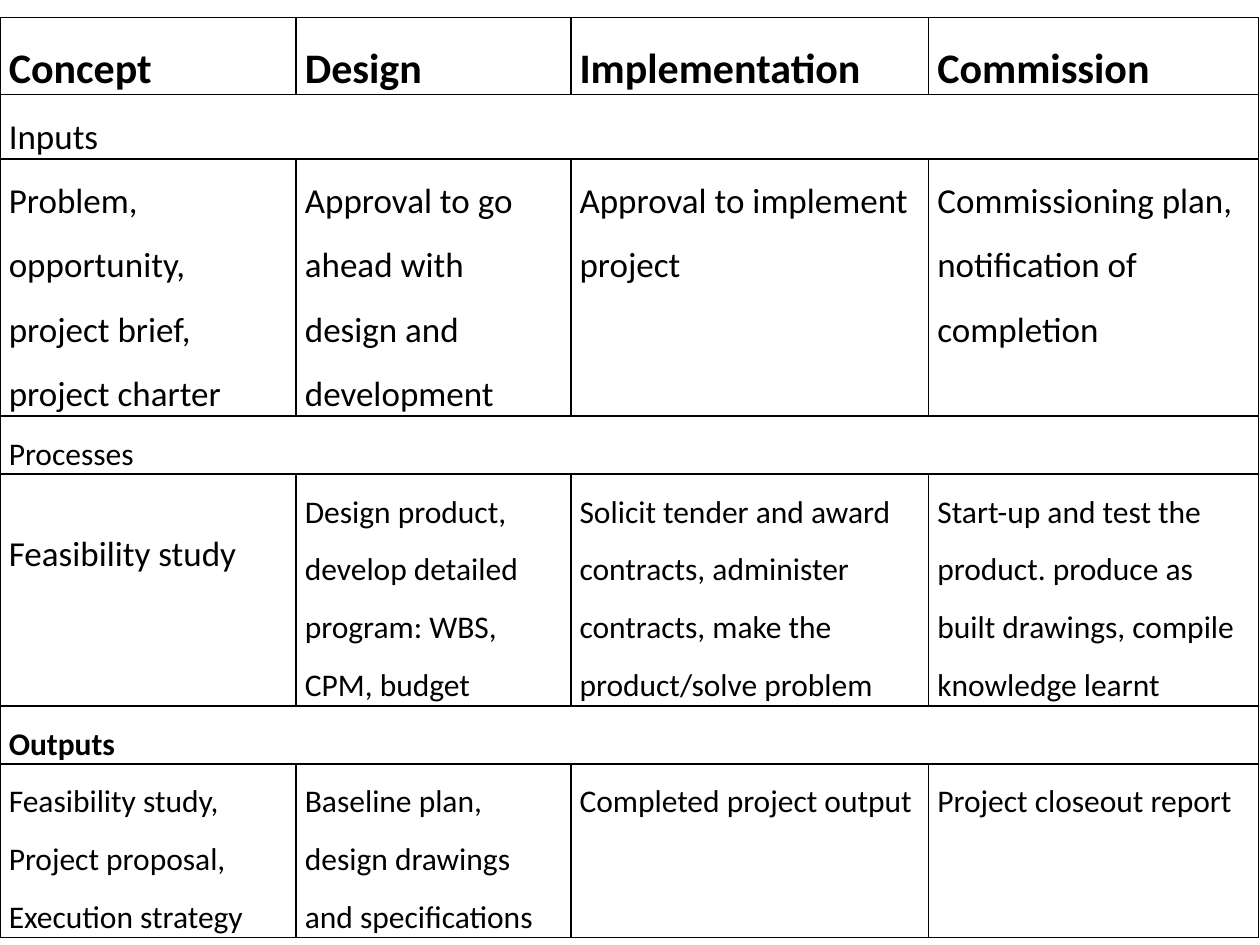
import pptx
import pptx.util
from pptx.dml.color import RGBColor
from pptx.enum.text import MSO_ANCHOR
from pptx.oxml import parse_xml
from pptx.oxml.ns import nsdecls
from pptx.util import Inches, Pt

COLORS = {"ink": "000000", "paper": "FFFFFF"}
FONT = "Calibri"
COLS = [2.35, 2.18, 2.84, 2.62]
# Row height, text size, bold, cell texts; a single text spans the row
ROWS = [
    (0.61, 24, True, ["Concept", "Design", "Implementation", "Commission"]),
    (0.51, 20, False, ["Inputs"]),
    (2.04, 20, False, [
        "Problem, opportunity, project brief, project charter",
        "Approval to go ahead with design and development",
        "Approval to implement project",
        "Commissioning plan, notification of completion"]),
    (0.46, 18, False, ["Processes"]),
    (1.84, 18, False, [
        "Feasibility study",
        "Design product, develop detailed program: WBS, CPM, budget",
        "Solicit tender and award contracts, administer contracts, "
        "make the product/solve problem",
        "Start-up and test the product. produce as built drawings, "
        "compile knowledge learnt"]),
    (0.46, 18, True, ["Outputs"]),
    (1.38, 18, False, [
        "Feasibility study, Project proposal, Execution strategy",
        "Baseline plan, design drawings and specifications",
        "Completed project output",
        "Project closeout report"]),
]
STUDY = (4, 0)  # the one cell set lower and larger than its row


def add_lines(cell):
    props = cell._tc.get_or_add_tcPr()
    for i, side in enumerate(["lnL", "lnR", "lnT", "lnB"]):
        props.insert(i, parse_xml(
            f'<a:{side} {nsdecls("a")} w="{Pt(1)}"><a:solidFill>'
            f'<a:srgbClr val="{COLORS["ink"]}"/></a:solidFill></a:{side}>'))


def style_cell(cell):
    cell.margin_left = cell.margin_right = Inches(0.07)
    cell.margin_top = cell.margin_bottom = 0
    cell.fill.solid()
    cell.fill.fore_color.rgb = RGBColor.from_string(COLORS["paper"])
    add_lines(cell)


def add_text(cell, text, size, bold):
    para = cell.text_frame.paragraphs[0]
    para.line_spacing = 1.5
    run = para.add_run()
    run.text = text
    font = run.font
    font.name, font.size, font.bold = FONT, Pt(size), bold
    font.color.rgb = RGBColor.from_string(COLORS["ink"])


def add_grid(slide):
    heights = [row[0] for row in ROWS]
    table = slide.shapes.add_table(
        len(ROWS), len(COLS), 0, Inches(0.14),
        Inches(sum(COLS)), Inches(sum(heights))).table
    table.first_row = table.horz_banding = False
    for col, width in zip(table.columns, COLS):
        col.width = Inches(width)
    for r, (height, size, bold, texts) in enumerate(ROWS):
        table.rows[r].height = Inches(height)
        for c in range(len(COLS)):
            style_cell(table.cell(r, c))
        for c, text in enumerate(texts):
            add_text(table.cell(r, c), text,
                     20 if (r, c) == STUDY else size, bold)
        if len(texts) == 1:
            first = table.cell(r, 0)
            first.merge(table.cell(r, len(COLS) - 1))
            first.vertical_anchor = MSO_ANCHOR.MIDDLE
    table.cell(*STUDY).margin_top = Inches(0.3)


def main():
    deck = pptx.Presentation()
    deck.slide_width, deck.slide_height = Inches(10), Inches(7.5)
    slide = deck.slides.add_slide(deck.slide_layouts[6])
    add_grid(slide)
    deck.save("out.pptx")


if __name__ == "__main__":
    main()
